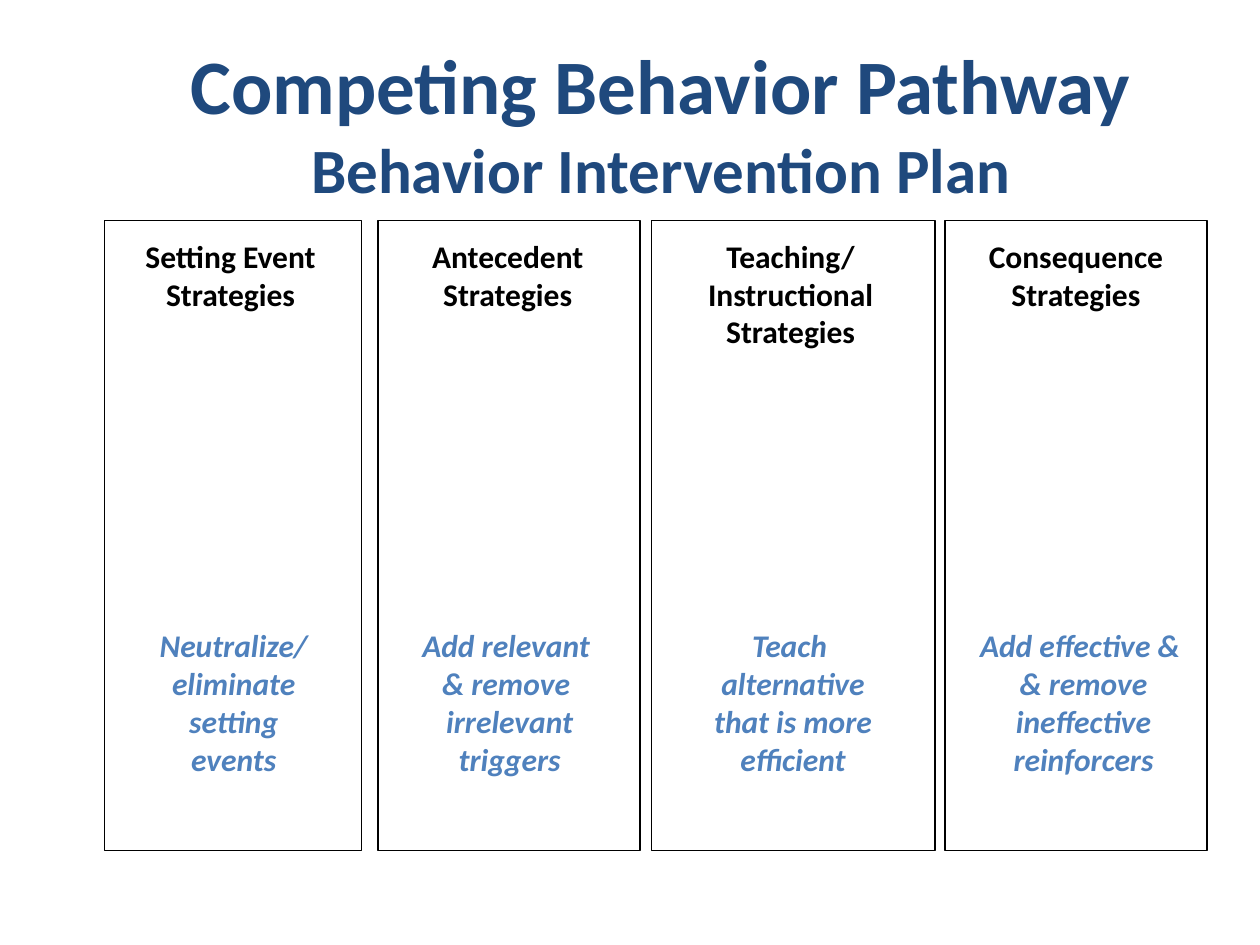
from pptx import Presentation
from pptx.dml.color import RGBColor
from pptx.enum.shapes import MSO_SHAPE
from pptx.enum.text import MSO_ANCHOR, MSO_AUTO_SIZE, PP_ALIGN
from pptx.util import Inches, Pt

PROCESS = MSO_SHAPE.FLOWCHART_PROCESS
TOP = MSO_ANCHOR.TOP
NO_AUTOFIT = MSO_AUTO_SIZE.NONE
CENTER = PP_ALIGN.CENTER
TITLE_ONLY = 5

COLUMN_TOP, COLUMN_HEIGHT = 1.75, 5
HEADING_TOP, GOAL_TOP, GOAL_HEIGHT = 1.83, 4.92, 1.31

# Each column: panel (left, width), heading (left, width, text),
# goal (left, width, lines)
COLUMNS = [
    ((0.83, 2.04), (0.79, 2.08, "Setting Event Strategies"),
     (1.16, 1.39, ["Neutralize/", "eliminate", "setting", "events"])),
    ((3, 2.08), (3.03, 2, "Antecedent Strategies"),
     (3.24, 1.61, ["Add relevant ", "& remove ", "irrelevant", "triggers"])),
    ((5.17, 2.25), (5.4, 1.75, "Teaching/ Instructional Strategies"),
     (5.56, 1.47, ["Teach ", "alternative", "that is more", "efficient"])),
    ((7.5, 2.08), (7.54, 2, "Consequence Strategies"),
     (7.67, 1.86, ["Add effective & ", "& remove", "ineffective", "reinforcers"])),
]


def rgb(value):
    return RGBColor.from_string(value)


class PlanSlide:
    FONT = "Calibri"
    TITLE_COLOR = "1F497D"
    HEADING_COLOR = "000000"
    GOAL_COLOR = "4F81BD"
    PANEL_FILL = "FFFFFF"
    PANEL_LINE = "000000"
    TEXT_SIZE = 18

    def __init__(self, presentation):
        layout = presentation.slide_layouts[TITLE_ONLY]
        self.slide = presentation.slides.add_slide(layout)

    def set_text(self, shape, lines, sizes, color, italic=False, wrap=True):
        """Fill a shape with one centred bold paragraph per line."""
        text_frame = shape.text_frame
        text_frame.text = "\n".join(lines)
        text_frame.word_wrap = wrap
        text_frame.auto_size = NO_AUTOFIT
        text_frame.vertical_anchor = TOP
        for paragraph, size in zip(text_frame.paragraphs, sizes):
            paragraph.alignment = CENTER
            paragraph.space_before = Pt(0)
            for run in paragraph.runs:
                run.font.name = self.FONT
                run.font.size = Pt(size)
                run.font.bold = True
                run.font.italic = italic
                run.font.color.rgb = rgb(color)

    def title(self, left, top, width, height, lines, sizes):
        shape = self.slide.shapes.title
        shape.left, shape.top = Inches(left), Inches(top)
        shape.width, shape.height = Inches(width), Inches(height)
        self.set_text(shape, lines, sizes, self.TITLE_COLOR)

    def panel(self, left, width):
        shape = self.slide.shapes.add_shape(
            PROCESS, Inches(left), Inches(COLUMN_TOP),
            Inches(width), Inches(COLUMN_HEIGHT))
        shape.shadow.inherit = False
        shape.fill.solid()
        shape.fill.fore_color.rgb = rgb(self.PANEL_FILL)
        shape.line.color.rgb = rgb(self.PANEL_LINE)
        shape.line.width = Pt(0.75)

    def text_box(self, left, top, width, height):
        return self.slide.shapes.add_textbox(
            Inches(left), Inches(top), Inches(width), Inches(height))

    def heading(self, left, width, text):
        height = 1.01 if "/" in text else 0.71
        box = self.text_box(left, HEADING_TOP, width, height)
        self.set_text(box, [text], [self.TEXT_SIZE], self.HEADING_COLOR)

    def goal(self, left, width, lines):
        box = self.text_box(left, GOAL_TOP, width, GOAL_HEIGHT)
        self.set_text(box, lines, [self.TEXT_SIZE] * len(lines),
                      self.GOAL_COLOR, italic=True, wrap=False)


def main():
    presentation = Presentation()
    presentation.slide_width = Inches(10)
    presentation.slide_height = Inches(7.5)

    plan = PlanSlide(presentation)
    plan.title(0.41, 0.25, 9.67, 1.45,
               ["Competing Behavior Pathway", "Behavior Intervention Plan"],
               [44, 36])
    for panel, heading, goal in COLUMNS:
        plan.panel(*panel)
        plan.heading(*heading)
        plan.goal(*goal)

    presentation.save("out.pptx")


if __name__ == "__main__":
    main()
